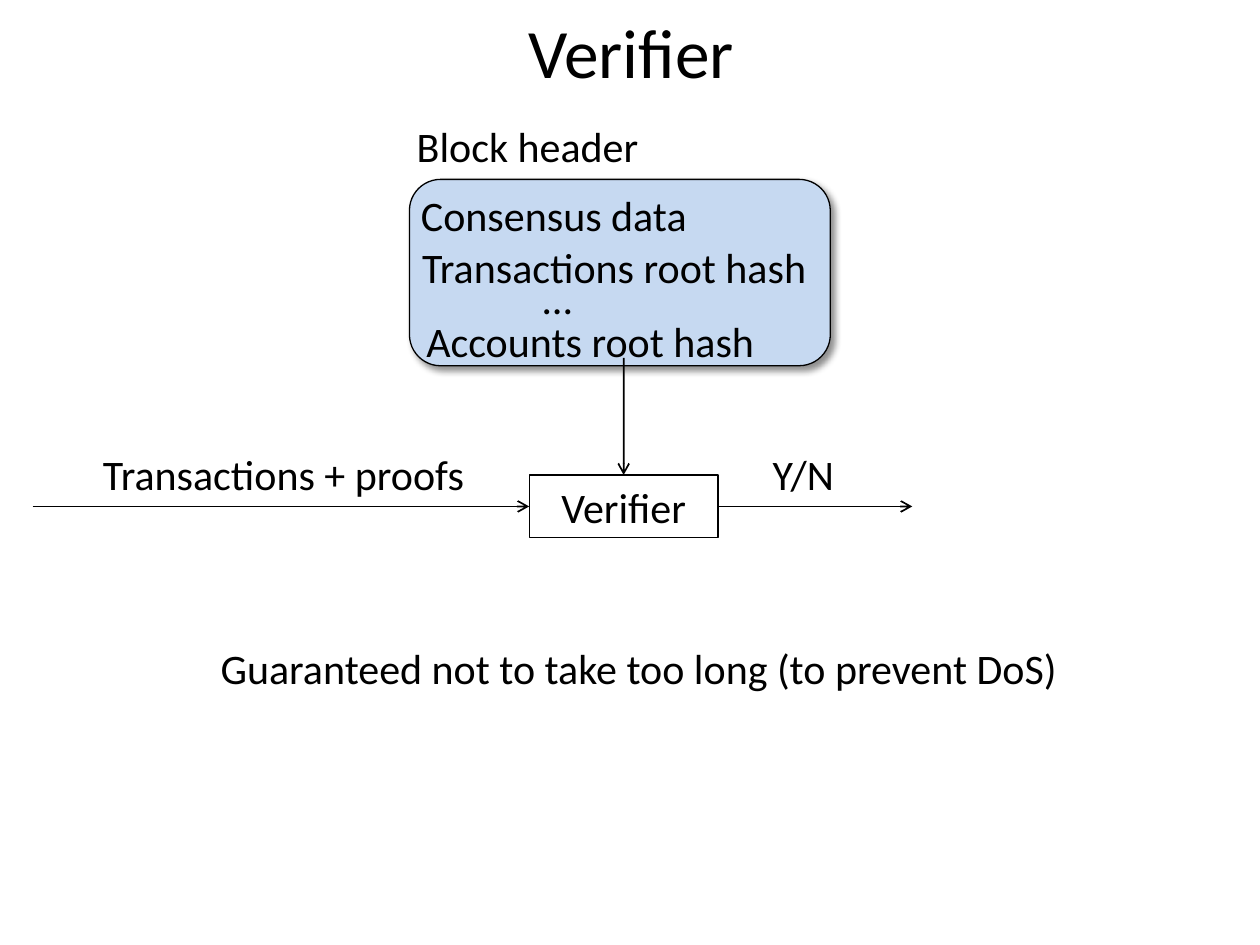
from dataclasses import dataclass
from typing import Optional

from lxml import etree
from pptx import Presentation
from pptx.dml.color import RGBColor
from pptx.enum.shapes import MSO_CONNECTOR, MSO_SHAPE
from pptx.enum.text import MSO_ANCHOR, MSO_AUTO_SIZE, PP_ALIGN
from pptx.oxml.ns import qn
from pptx.util import Pt

BLACK = RGBColor(0x00, 0x00, 0x00)
PALE_BLUE = RGBColor(0xC6, 0xD9, 0xF1)
STRAIGHT = MSO_CONNECTOR.STRAIGHT
RECTANGLE, ROUNDED = MSO_SHAPE.RECTANGLE, MSO_SHAPE.ROUNDED_RECTANGLE
MIDDLE, TOP = MSO_ANCHOR.MIDDLE, MSO_ANCHOR.TOP
CENTER = PP_ALIGN.CENTER
GROW, NO_FIT = MSO_AUTO_SIZE.SHAPE_TO_FIT_TEXT, MSO_AUTO_SIZE.NONE
TOP_SIDE, LEFT_SIDE, RIGHT_SIDE = 0, 1, 3
LABEL_HEIGHT = 36


@dataclass(frozen=True)
class Label:
    text: str
    left: float
    top: float
    width: float


@dataclass(frozen=True)
class Arrow:
    start: tuple[float, float]
    end: tuple[float, float]
    begin_side: Optional[int] = None
    end_side: Optional[int] = None


LABELS = [
    Label("Block header", 214.5, 65.5, 174),
    Label("Consensus data", 229.5, 104.5, 174),
    Label("Transactions root hash", 222.5, 134.5, 257),
    Label("…", 298, 152, 41),
    Label("Accounts root hash", 236, 176.5, 202.5),
    Label("Transactions + proofs", 26, 252.5, 272),
    Label("Y/N ", 427.5, 252.5, 68.5),
    Label("Guaranteed not to take too long (to prevent DoS)", 55.5, 363.5, 619),
]
ARROWS = [
    Arrow((356.4, 204.5), (356.4, 271.4), end_side=TOP_SIDE),
    Arrow((18.7, 289.4), (302.4, 289.4), end_side=LEFT_SIDE),
    Arrow((410.4, 289.4), (521.3, 289.4), begin_side=RIGHT_SIDE),
]


def write_text(shape, text: str, size: float, anchor, fit) -> None:
    frame = shape.text_frame
    frame_format = {"text": text, "word_wrap": True, "auto_size": fit,
                    "vertical_anchor": anchor}
    for name, value in frame_format.items():
        setattr(frame, name, value)
    para = frame.paragraphs[0]
    para.alignment = CENTER
    font = para.runs[0].font
    for name, value in {"name": "Calibri", "size": Pt(size)}.items():
        setattr(font, name, value)
    font.color.rgb = BLACK


def add_label(slide, label: Label) -> None:
    box = slide.shapes.add_textbox(
        Pt(label.left), Pt(label.top), Pt(label.width), Pt(LABEL_HEIGHT))
    write_text(box, label.text, 24, TOP, GROW)


def add_outlined(slide, kind, left: float, top: float, width: float, height: float):
    shape = slide.shapes.add_shape(kind, Pt(left), Pt(top), Pt(width), Pt(height))
    shape.shadow.inherit = False
    shape.fill.background()
    shape.line.color.rgb = BLACK
    shape.line.width = Pt(0.75)
    return shape


def add_shadow(shape) -> None:
    effects = shape._element.spPr.find(qn("a:effectLst"))
    shadow = etree.SubElement(
        effects, qn("a:outerShdw"), blurRad=str(Pt(4)), dist=str(Pt(3)),
        dir=str(45 * 60000), algn="tl", rotWithShape="0")
    color = etree.SubElement(shadow, qn("a:srgbClr"), val=str(BLACK))
    etree.SubElement(color, qn("a:alpha"), val="43000")


def add_arrow(slide, arrow: Arrow, target) -> None:
    connector = slide.shapes.add_connector(
        STRAIGHT, *(Pt(value) for value in arrow.start + arrow.end))
    if arrow.begin_side is not None:
        connector.begin_connect(target, arrow.begin_side)
    if arrow.end_side is not None:
        connector.end_connect(target, arrow.end_side)
    connector.line.color.rgb = BLACK
    connector.line.width = Pt(1)
    properties = connector._element.spPr
    etree.SubElement(properties.find(qn("a:ln")), qn("a:tailEnd"), type="arrow")
    etree.SubElement(properties, qn("a:effectLst"))


def main() -> None:
    deck = Presentation()
    deck.slide_width, deck.slide_height = Pt(720), Pt(540)
    slide = deck.slides.add_slide(deck.slide_layouts[5])

    title = slide.shapes.title
    place = {"left": 18.7, "top": 5, "width": 684, "height": 47.5}
    for name, value in place.items():
        setattr(title, name, Pt(value))
    write_text(title, "Verifier", 39.6, MIDDLE, NO_FIT)

    header = add_outlined(slide, ROUNDED, 234, 102.5, 240.5, 106.5)
    header.fill.solid()
    header.fill.fore_color.rgb = PALE_BLUE
    add_shadow(header)

    verifier = add_outlined(slide, RECTANGLE, 302.4, 271.4, 108, LABEL_HEIGHT)
    write_text(verifier, "Verifier", 24, TOP, GROW)

    for arrow in ARROWS:
        add_arrow(slide, arrow, verifier)
    for label in LABELS:
        add_label(slide, label)

    deck.save("out.pptx")


if __name__ == "__main__":
    main()
